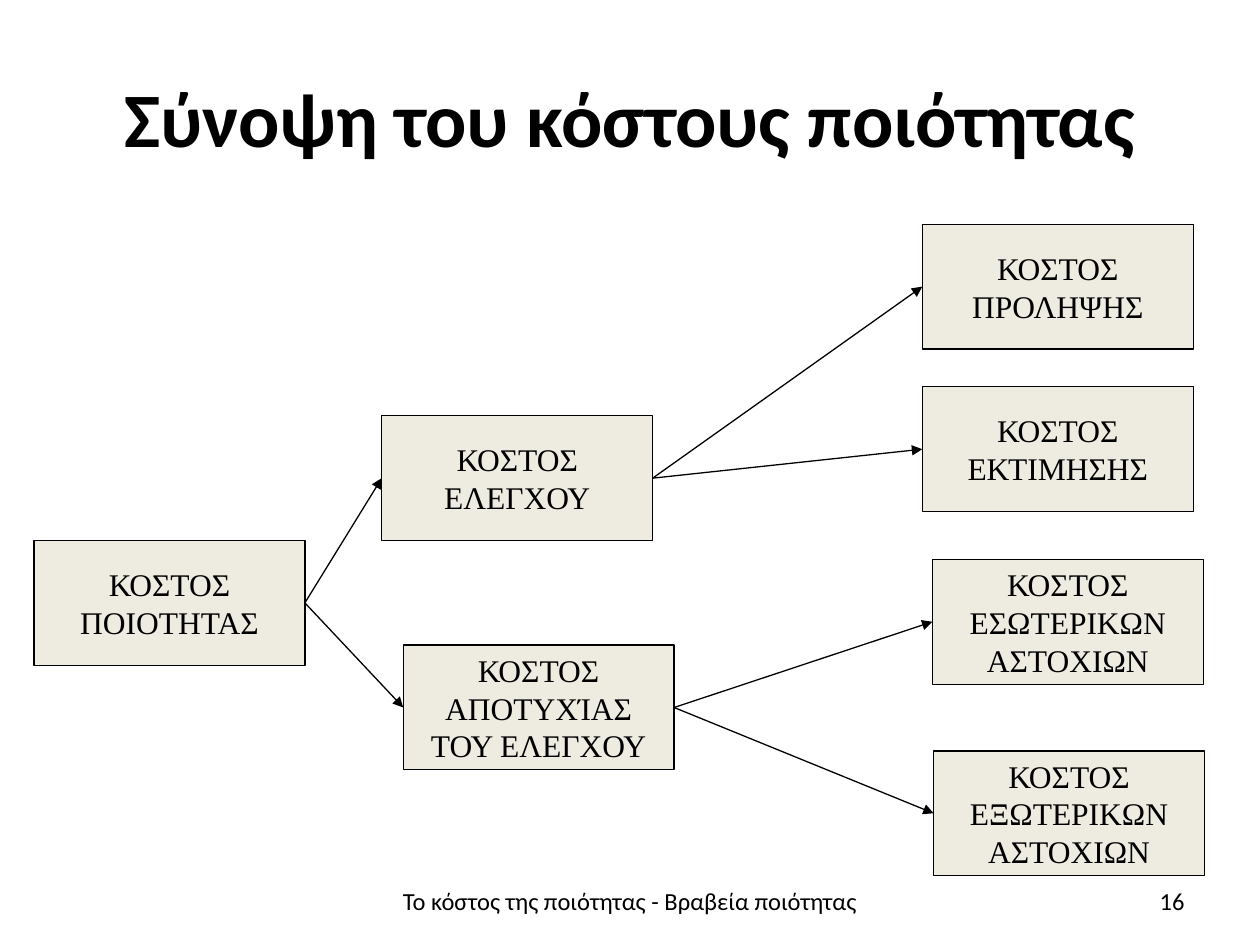
from lxml import etree
from pptx import Presentation
from pptx.dml.color import RGBColor
from pptx.enum import shapes, text
from pptx.oxml import ns
from pptx.util import Inches, Pt

BLACK, BEIGE = "000000", "EEECE1"
BOX_W, BOX_H = 2.15, 0.99
LEFT_SITE, RIGHT_SITE = 1, 3  # connection sites of a rectangle

# Content: cost -> (left, top, lines)
COSTS = {
    "quality": (0.27, 4.29, ["ΚΟΣΤΟΣ", "ΠΟΙΟΤΗΤΑΣ"]),
    "control": (3.03, 3.3, ["ΚΟΣΤΟΣ", "ΕΛΕΓΧΟΥ"]),
    "control failure": (3.2, 5.12, ["ΚΟΣΤΟΣ", "ΑΠΟΤΥΧΊΑΣ", "ΤΟΥ ΕΛΕΓΧΟΥ"]),
    "prevention": (7.32, 1.78, ["ΚΟΣΤΟΣ", "ΠΡΟΛΗΨΗΣ"]),
    "appraisal": (7.32, 3.07, ["ΚΟΣΤΟΣ", "ΕΚΤΙΜΗΣΗΣ"]),
    "internal failure": (7.4, 4.44, ["ΚΟΣΤΟΣ", "ΕΣΩΤΕΡΙΚΩΝ", "ΑΣΤΟΧΙΩΝ"]),
    "external failure": (7.41, 5.96, ["ΚΟΣΤΟΣ", "ΕΞΩΤΕΡΙΚΩΝ", "ΑΣΤΟΧΙΩΝ"]),
}
BREAKDOWN = {
    "quality": ["control", "control failure"],
    "control": ["prevention", "appraisal"],
    "control failure": ["internal failure", "external failure"],
}
CENTER, RIGHT = text.PP_ALIGN.CENTER, text.PP_ALIGN.RIGHT
# (left, top, width, height), wording, size, bold, alignment
CAPTIONS = [
    ((0.5, 0.3, 9, 1.25), "Σύνοψη του κόστους ποιότητας", 44, True, CENTER),
    ((2.56, 6.95, 4.88, 0.4), "Το κόστος της ποιότητας - Βραβεία ποιότητας", 14, False, CENTER),
    ((7.17, 6.95, 2.33, 0.4), "16", 14, False, RIGHT),
]


def color(hex_code):
    return RGBColor.from_string(hex_code)


def write(frame, lines, font, size, bold=False, align=CENTER, wrap=True):
    frame.text = "\n".join(lines)
    frame.word_wrap = wrap
    frame.vertical_anchor = text.MSO_ANCHOR.MIDDLE
    for paragraph in frame.paragraphs:
        paragraph.alignment = align
        for run in paragraph.runs:
            run.font.name, run.font.size, run.font.bold = font, Pt(size), bold
            run.font.color.rgb = color(BLACK)


def outline(line):
    line.color.rgb = color(BLACK)
    line.width = Pt(0.75)


def add_cost_box(slide, left, top, lines):
    box = slide.shapes.add_shape(
        shapes.MSO_SHAPE.RECTANGLE, *map(Inches, (left, top, BOX_W, BOX_H)))
    box.shadow.inherit = False
    box.fill.solid()
    box.fill.fore_color.rgb = color(BEIGE)
    outline(box.line)
    write(box.text_frame, lines, "Times New Roman", 18, wrap=False)
    return box


def add_arrow(slide, parent, child):
    arrow = slide.shapes.add_connector(shapes.MSO_CONNECTOR.STRAIGHT, 0, 0, 0, 0)
    arrow.begin_connect(parent, RIGHT_SITE)
    arrow.end_connect(child, LEFT_SITE)
    outline(arrow.line)
    etree.SubElement(arrow.line._get_or_add_ln(), ns.qn("a:tailEnd"), type="triangle")
    etree.SubElement(arrow._element.spPr, ns.qn("a:effectLst"))


def main():
    prs = Presentation()
    prs.slide_width, prs.slide_height = Inches(10), Inches(7.5)
    slide = prs.slides.add_slide(prs.slide_layouts[6])

    # Title, footer and page number
    for place, wording, size, bold, align in CAPTIONS:
        caption = slide.shapes.add_textbox(*map(Inches, place))
        write(caption.text_frame, [wording], "Calibri", size, bold, align)

    # Cost tree
    boxes = {cost: add_cost_box(slide, *details) for cost, details in COSTS.items()}
    for parent, children in BREAKDOWN.items():
        for child in children:
            add_arrow(slide, boxes[parent], boxes[child])

    prs.save("out.pptx")


if __name__ == "__main__":
    main()
